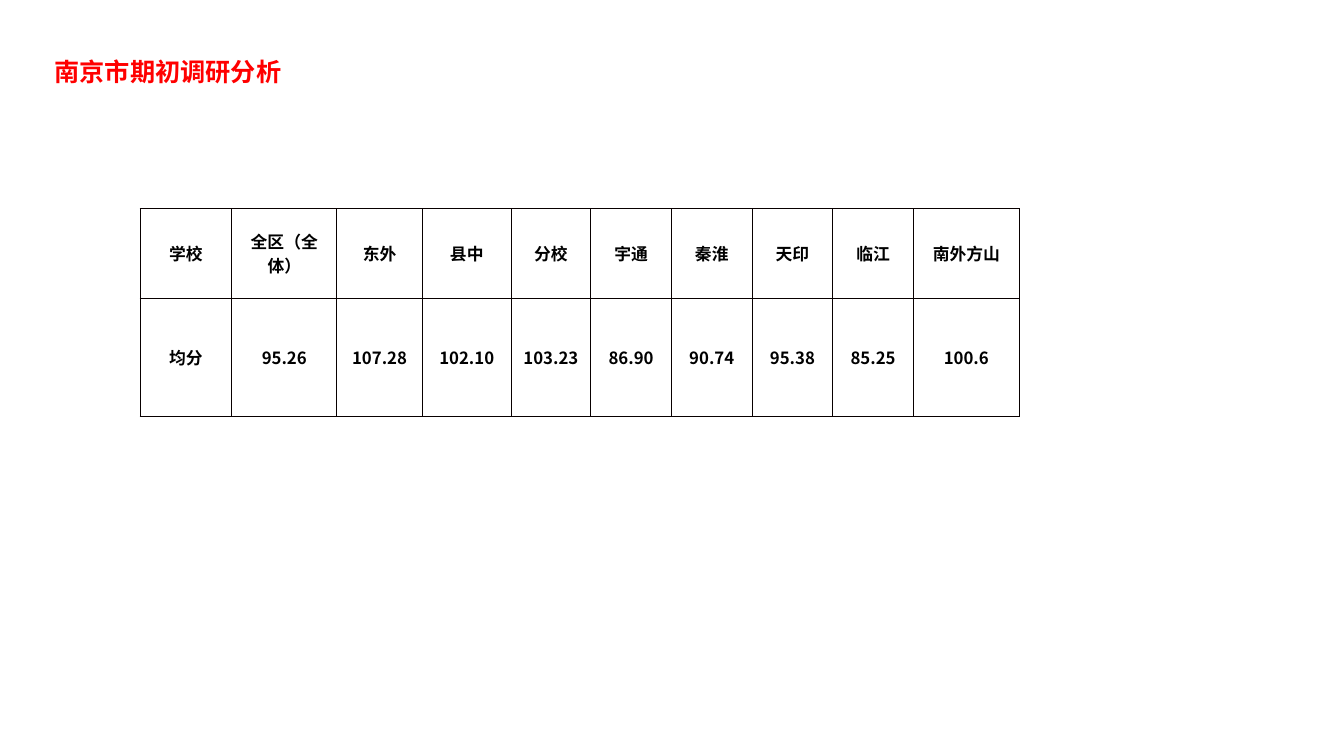
import pptx
import pptx.util
import pptx.dml.color
import pptx.enum.text
import pptx.oxml
import pptx.oxml.ns
from pptx.util import Inches

COLORS = {"title": "FF0000", "text": "000000", "border": "080000"}
CJK_FONT = "Noto Sans CJK SC"
SCORES = {
    "学校": "均分",
    "全区（全体）": "95.26",
    "东外": "107.28",
    "县中": "102.10",
    "分校": "103.23",
    "宇通": "86.90",
    "秦淮": "90.74",
    "天印": "95.38",
    "临江": "85.25",
    "南外方山": "100.6",
}
COLUMN_WIDTHS = [0.91, 1.04, 0.85, 0.88, 0.79, 0.8, 0.8, 0.8, 0.8, 1.05]
ROW_HEIGHTS = [0.89, 1.17]


class ScorePage:
    def __init__(self, deck):
        self.page = deck.slides.add_slide(deck.slide_layouts[5])

    def apply(self, target, values):
        for name, value in values.items():
            setattr(target, name, value)

    def add_text(self, para, text, font, size, color, align):
        para.alignment = align
        span = para.add_run()
        span.text = text
        self.apply(span.font, {"name": font, "size": pptx.util.Pt(size), "bold": True})
        span.font.color.rgb = pptx.dml.color.RGBColor.from_string(COLORS[color])
        east_asian = pptx.oxml.parse_xml(
            f'<a:ea {pptx.oxml.ns.nsdecls("a")} typeface="{CJK_FONT}"/>'
        )
        span.font._element.find(pptx.oxml.ns.qn("a:latin")).addnext(east_asian)

    def title(self, text, left, top, width, height):
        box = self.page.shapes.title
        self.apply(box, {
            "left": Inches(left), "top": Inches(top),
            "width": Inches(width), "height": Inches(height),
        })
        self.apply(box.text_frame, {
            "word_wrap": True,
            "auto_size": pptx.enum.text.MSO_AUTO_SIZE.SHAPE_TO_FIT_TEXT,
            "vertical_anchor": pptx.enum.text.MSO_ANCHOR.TOP,
        })
        self.add_text(box.text_frame.paragraphs[0], text, "Arial", 18, "title",
                      pptx.enum.text.PP_ALIGN.LEFT)

    def borders(self, cell):
        properties = cell._tc.get_or_add_tcPr()
        for index, side in enumerate(["lnL", "lnR", "lnT", "lnB"]):
            properties.insert(index, pptx.oxml.parse_xml(
                f'<a:{side} {pptx.oxml.ns.nsdecls("a")} w="{pptx.util.Pt(1)}">'
                f'<a:solidFill><a:srgbClr val="{COLORS["border"]}"/></a:solidFill>'
                f'</a:{side}>'
            ))

    def cell(self, cell, text):
        self.apply(cell, {
            "margin_left": Inches(0.07), "margin_right": Inches(0.07),
            "margin_top": 0, "margin_bottom": 0,
            "vertical_anchor": pptx.enum.text.MSO_ANCHOR.MIDDLE,
        })
        cell.fill.background()
        self.borders(cell)
        self.add_text(cell.text_frame.paragraphs[0], text, CJK_FONT, 12, "text",
                      pptx.enum.text.PP_ALIGN.CENTER)

    def table(self, rows, left, top, widths, heights):
        table = self.page.shapes.add_table(
            len(heights), len(widths), Inches(left), Inches(top),
            Inches(sum(widths)), Inches(sum(heights)),
        ).table
        self.apply(table, {"first_row": False, "horz_banding": False})
        for column, width in zip(table.columns, widths):
            column.width = Inches(width)
        for row, height, texts in zip(table.rows, heights, rows):
            row.height = Inches(height)
            for cell, text in zip(row.cells, texts):
                self.cell(cell, text)


def main():
    deck = pptx.Presentation()
    deck.slide_width = Inches(13.33)
    deck.slide_height = Inches(7.5)
    score_page = ScorePage(deck)
    score_page.table([SCORES.keys(), SCORES.values()], 1.39, 2.07,
                     COLUMN_WIDTHS, ROW_HEIGHTS)
    score_page.title("南京市期初调研分析", 0.44, 0.51, 5.23, 0.4)
    deck.save("out.pptx")


if __name__ == "__main__":
    main()
